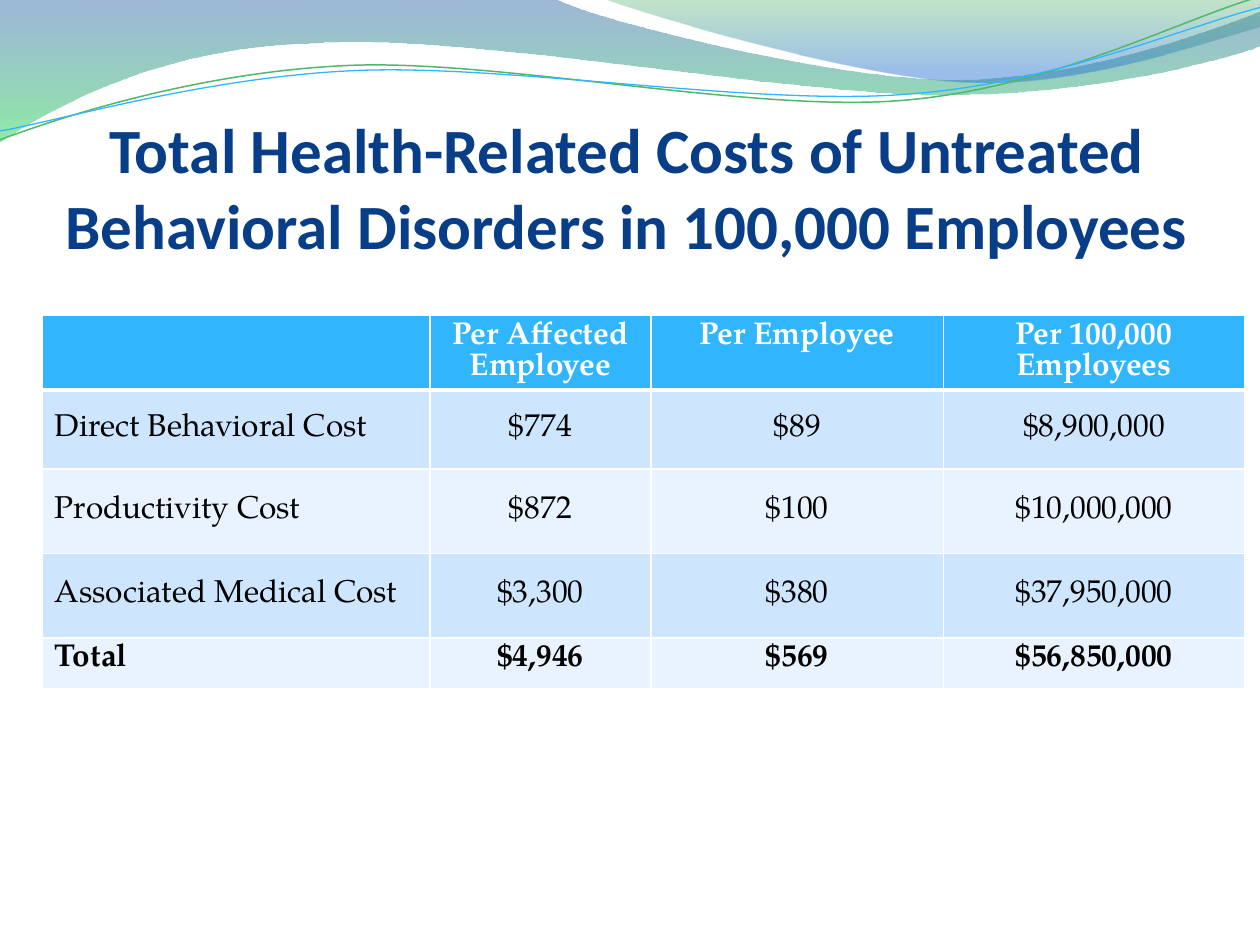
from dataclasses import dataclass
from typing import Any, Optional

import lxml.etree
import pptx
import pptx.dml.color
import pptx.enum.text
import pptx.oxml.ns
import pptx.util

Cm = pptx.util.Cm
Pt = pptx.util.Pt
qn = pptx.oxml.ns.qn
ALIGN = pptx.enum.text.PP_ALIGN
ANCHOR = pptx.enum.text.MSO_ANCHOR

CURVE_UNIT = Cm(2.54)  # wave coordinates are counted in tenths of the page width

Point = tuple[float, float]


@dataclass
class Stop:
    position: float
    color: str
    opacity: int


@dataclass
class Wave:
    """Each segment holds one point (straight) or three points (cubic curve)."""
    start: Point
    segments: list[list[Point]]
    stops: tuple[Stop, ...] = ()
    line_color: Optional[str] = None
    line_width: float = 0


@dataclass
class RowStyle:
    fill: str
    color: str = "000000"
    bold: bool = False
    anchor: ANCHOR = ANCHOR.MIDDLE
    bottom_border: float = 1


@dataclass
class CostRow:
    height: float
    cells: tuple[str, ...]
    style: RowStyle


WAVES = [
    Wave((0, 0), [
        [(4.4, -0.01)],
        [(4.76, 0.17), (6.64, 0.63), (7.58, 0.63)],
        [(8.53, 0.63), (9.58, 0.26), (10, 0.09)],
        [(10.01, 0.36)],
        [(9.83, 0.44), (8.7, 0.76), (7.46, 0.75)],
        [(6.22, 0.75), (3.82, 0.28), (2.57, 0.34)],
        [(1.29, 0.36), (0.46, 0.83), (-0.01, 1.13)],
        [(0, 0)],
    ], stops=(Stop(0, "2960A7", 45), Stop(1, "35DA5E", 55))),
    Wave((4.79, -0.01), [
        [(5.09, 0.11), (6.82, 0.62), (7.69, 0.65)],
        [(8.56, 0.69), (9.61, 0.32), (10, 0.21)],
        [(10, 0)],
        [(4.79, -0.01)],
    ], stops=(Stop(0, "36A752", 30), Stop(0.8, "2472D3", 45))),
    Wave((0, 1.11), [
        [(0.48, 0.93), (1.58, 0.57), (2.77, 0.52)],
        [(3.95, 0.47), (5.93, 0.89), (7.13, 0.8)],
        [(8.33, 0.71), (9.38, 0.15), (9.98, -0.02)],
    ], line_color="50B86A", line_width=0.85),
    Wave((0, 1.04), [
        [(0.47, 0.96), (1.64, 0.61), (2.83, 0.56)],
        [(4.03, 0.51), (5.97, 0.84), (7.17, 0.75)],
        [(8.36, 0.67), (9.41, 0.21), (10, 0.06)],
    ], line_color="31B6FD", line_width=0.75),
]

HEADER = RowStyle("31B6FD", "FFFFFF", True, ANCHOR.TOP, 3)
DARK = RowStyle("CEE5FE")
LIGHT = RowStyle("E8F3FF")
TOTAL = RowStyle("E8F3FF", bold=True, anchor=ANCHOR.TOP)

COLUMN_WIDTHS = (7.82, 4.45, 5.9, 6.07)
COST_ROWS = [
    CostRow(1.03, ("", "Per Affected Employee", "Per Employee", "Per 100,000 Employees"), HEADER),
    CostRow(1.6, ("Direct Behavioral Cost", "$774", "$89", "$8,900,000"), DARK),
    CostRow(1.7, ("Productivity Cost", "$872", "$100", "$10,000,000"), LIGHT),
    CostRow(1.7, ("Associated Medical Cost", "$3,300", "$380", "$37,950,000"), DARK),
    CostRow(1.03, ("Total", "$4,946", "$569", "$56,850,000"), TOTAL),
]


def rgb(value: str) -> pptx.dml.color.RGBColor:
    return pptx.dml.color.RGBColor.from_string(value)


def apply_format(target: Any, values: dict[str, Any]) -> None:
    for name, value in values.items():
        setattr(target, name, value)


def write_text(frame: Any, text: str, align: ALIGN, size: float, font: str,
               color: str, bold: bool) -> None:
    para = frame.paragraphs[0]
    para.alignment = align
    span = para.add_run()
    span.text = text
    apply_format(span.font, {"size": Pt(size), "name": font, "bold": bold})
    span.font.color.rgb = rgb(color)


def bend_segments(shape: Any, segments: list[list[Point]]) -> None:
    """Join the straight steps of each three-point segment into one cubic curve."""
    steps = iter(list(shape.element.iter(qn("a:lnTo"))))
    for segment in segments:
        first, *others = [next(steps) for _ in segment]
        if others:
            first.tag = qn("a:cubicBezTo")
            for step in others:
                first.append(step[0])
                step.getparent().remove(step)


def draw_wave(page: Any, wave: Wave) -> None:
    points = [wave.start, *(point for segment in wave.segments for point in segment)]
    start, *rest = [(round(x * CURVE_UNIT), round(y * CURVE_UNIT)) for x, y in points]
    builder = page.shapes.build_freeform(*start)
    builder.add_line_segments(rest, close=bool(wave.stops))
    shape = builder.convert_to_shape()
    bend_segments(shape, wave.segments)
    shape.shadow.inherit = False
    if wave.stops:
        shape.line.fill.background()
        shape.fill.gradient()
        shape.fill.gradient_angle = 270
        for stop, wanted in zip(shape.fill.gradient_stops, wave.stops):
            stop.position = wanted.position
            stop.color.rgb = rgb(wanted.color)
        colors = shape.element.spPr.iter(qn("a:srgbClr"))
        for color, wanted in zip(colors, wave.stops):
            for effect in list(color):
                color.remove(effect)
            lxml.etree.SubElement(color, qn("a:alpha"), val=str(wanted.opacity * 1000))
    else:
        shape.fill.background()
        shape.line.color.rgb = rgb(wave.line_color)
        shape.line.width = Pt(wave.line_width)


def set_borders(cell: Any, top: float, bottom: float) -> None:
    """White borders; they must stand before the fill in the cell properties."""
    properties = cell._tc.get_or_add_tcPr()
    for index, (side, width) in enumerate({"L": 1, "R": 1, "T": top, "B": bottom}.items()):
        border = lxml.etree.Element(qn(f"a:ln{side}"), w=str(Pt(width)))
        fill = lxml.etree.SubElement(border, qn("a:solidFill"))
        lxml.etree.SubElement(fill, qn("a:srgbClr"), val="FFFFFF")
        properties.insert(index, border)


def draw_cost_table(page: Any) -> None:
    frame = page.shapes.add_table(
        len(COST_ROWS), len(COLUMN_WIDTHS), Cm(0.85), Cm(6.36),
        Cm(sum(COLUMN_WIDTHS)), Cm(7.8))
    table = frame.table
    for column, width in zip(table.columns, COLUMN_WIDTHS):
        column.width = Cm(width)
    top_border = 1
    for row_index, row in enumerate(COST_ROWS):
        table.rows[row_index].height = Cm(row.height)
        style = row.style
        for column_index, text in enumerate(row.cells):
            cell = table.cell(row_index, column_index)
            cell.vertical_anchor = style.anchor
            cell.fill.solid()
            cell.fill.fore_color.rgb = rgb(style.fill)
            set_borders(cell, top_border, style.bottom_border)
            if text:
                align = ALIGN.CENTER if column_index else ALIGN.LEFT
                write_text(cell.text_frame, text, align, 18, "TeX Gyre Pagella",
                           style.color, style.bold)
        top_border = style.bottom_border
    frame.height = Cm(7.8)


def main() -> None:
    deck = pptx.Presentation()
    apply_format(deck, {"slide_width": Cm(25.4), "slide_height": Cm(19.05)})
    page = deck.slides.add_slide(deck.slide_layouts[5])
    for wave in WAVES:
        draw_wave(page, wave)
    title = page.shapes.title
    apply_format(title, {"left": Cm(0.43), "top": Cm(2.11),
                         "width": Cm(24.41), "height": Cm(3.61)})
    apply_format(title.text_frame, {"word_wrap": True, "vertical_anchor": ANCHOR.TOP})
    write_text(title.text_frame,
               "Total Health-Related Costs of Untreated Behavioral Disorders in 100,000 Employees",
               ALIGN.CENTER, 36, "Calibri", "073E87", True)
    draw_cost_table(page)
    deck.save("out.pptx")


if __name__ == "__main__":
    main()
